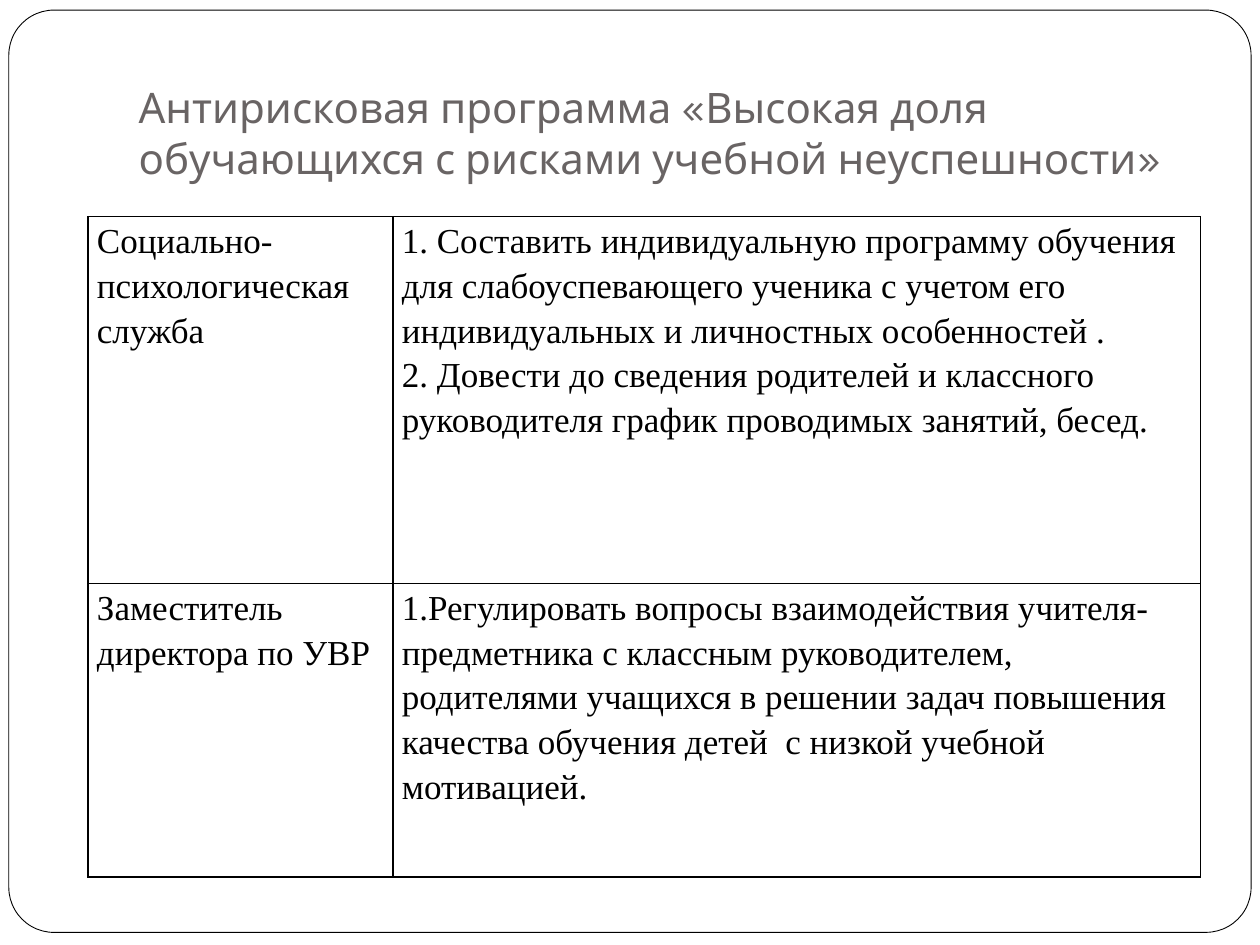
"""Build a slide with a titled table of duties inside a rounded frame."""
from lxml import etree
from pptx import Presentation
from pptx import util as u
from pptx.dml.color import RGBColor
from pptx.enum import shapes, text
from pptx.oxml.ns import qn

TITLE = "Антирисковая программа «Высокая доля обучающихся с рисками учебной неуспешности»"
DUTIES = [
    (["Социально-психологическая служба"],
     ["1. Составить индивидуальную программу обучения для слабоуспевающего ученика "
      "с учетом его индивидуальных и личностных особенностей .",
      "2. Довести до сведения родителей и классного руководителя график "
      "проводимых занятий, бесед."]),
    (["Заместитель директора по УВР"],
     ["1.Регулировать вопросы взаимодействия учителя-предметника с классным "
      "руководителем, родителями учащихся в решении задач повышения качества "
      "обучения детей  с низкой учебной мотивацией."]),
]
FRAME = (0.07, 0.08, 9.86, 7.32)
TITLE_BOX = (1, 0.3, 8.5, 1.25)
TABLE_AT = (0.7, 1.72)
COLS, ROWS = (2.42, 6.41), (2.91, 2.33)
BLACK, WHITE, GREY = "000000", "FFFFFF", "696464"


def color(value):
    return RGBColor.from_string(value)


def inches(values):
    return [u.Inches(v) for v in values]


def write(tf, lines, font, size, ink=BLACK, spacing=None):
    for i, line in enumerate(lines):
        p = tf.paragraphs[0] if i == 0 else tf.add_paragraph()
        p.alignment = text.PP_ALIGN.LEFT
        p.line_spacing = spacing
        r = p.add_run()
        r.text = line
        r.font.name, r.font.size = font, u.Pt(size)
        r.font.color.rgb = color(ink)


def add_borders(cell, ink=BLACK, width=1):
    tc_pr = cell._tc.get_or_add_tcPr()
    for i, side in enumerate(("lnL", "lnR", "lnT", "lnB")):
        ln = etree.Element(qn(f"a:{side}"), w=str(u.Pt(width)))
        fill = etree.SubElement(ln, qn("a:solidFill"))
        etree.SubElement(fill, qn("a:srgbClr"), val=ink)
        tc_pr.insert(i, ln)


def add_frame(slide):
    sp = slide.shapes.add_shape(shapes.MSO_SHAPE.ROUNDED_RECTANGLE, *inches(FRAME))
    sp.adjustments[0] = 0.049
    sp.shadow.inherit = False
    sp.fill.solid()
    sp.fill.fore_color.rgb = color(WHITE)
    sp.line.color.rgb = color(BLACK)
    sp.line.width = u.Pt(0.5)
    slide.shapes._spTree.insert(2, sp._element)


def add_title(slide):
    sp = slide.shapes.title
    sp.left, sp.top, sp.width, sp.height = inches(TITLE_BOX)
    tf = sp.text_frame
    tf.word_wrap = True
    tf.auto_size = text.MSO_AUTO_SIZE.NONE
    tf.vertical_anchor = text.MSO_ANCHOR.BOTTOM
    tf.margin_left, tf.margin_top, tf.margin_right, tf.margin_bottom = inches(
        (0.1, 0.05, 0.1, 0.1))
    write(tf, [TITLE], "Karla", 24, ink=GREY)


def add_duties(slide):
    table = slide.shapes.add_table(len(ROWS), len(COLS), *inches(TABLE_AT),
                                   *inches((sum(COLS), sum(ROWS)))).table
    table.first_row = table.horz_banding = False
    for col, width in zip(table.columns, inches(COLS)):
        col.width = width
    for row, height, duty in zip(table.rows, inches(ROWS), DUTIES):
        row.height = height
        for cell, lines in zip(row.cells, duty):
            cell.margin_left = cell.margin_right = u.Inches(0.07)
            cell.margin_top = cell.margin_bottom = 0
            cell.fill.background()
            add_borders(cell)
            write(cell.text_frame, lines, "Times New Roman", 20, spacing=1.15)


def main():
    prs = Presentation()
    prs.slide_width, prs.slide_height = inches((10, 7.5))
    slide = prs.slides.add_slide(prs.slide_layouts[5])
    add_frame(slide)
    add_title(slide)
    add_duties(slide)
    prs.save("out.pptx")


if __name__ == "__main__":
    main()
